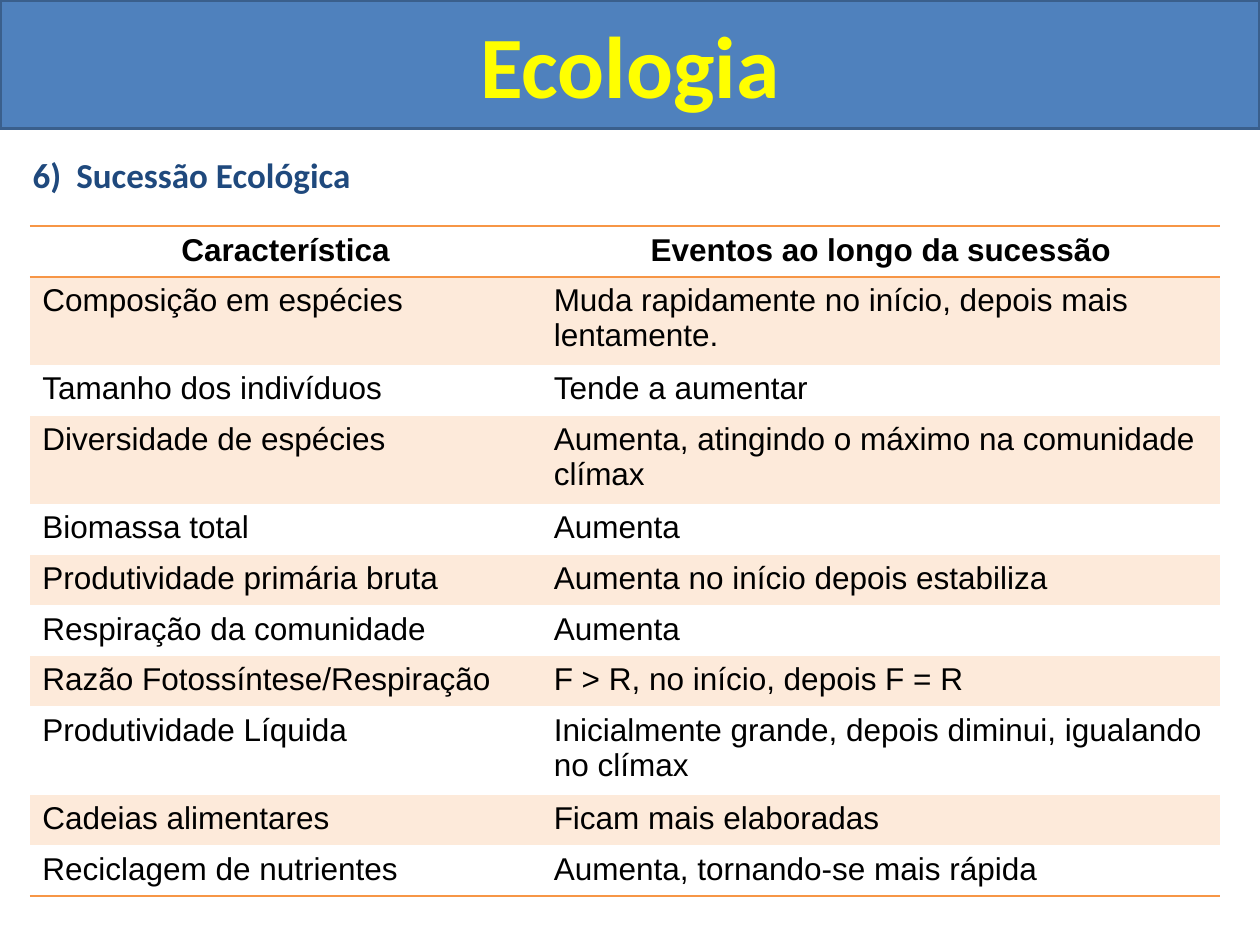
import pptx
import pptx.dml.color
import pptx.enum.shapes
import pptx.enum.text
import pptx.oxml
import pptx.oxml.ns
import pptx.util
from dataclasses import dataclass

Cm = pptx.util.Cm
Pt = pptx.util.Pt
CENTER = pptx.enum.text.PP_ALIGN.CENTER
LEFT = pptx.enum.text.PP_ALIGN.LEFT


@dataclass(frozen=True)
class Theme:
    banner: str = "4F81BD"
    banner_edge: str = "3A5F8C"
    title: str = "FFFF00"
    heading: str = "1F497D"
    body: str = "000000"
    rule: str = "F79646"
    band: str = "FDEADA"
    title_size: int = 50
    heading_size: int = 20
    body_size: int = 18
    title_font: str = "Calibri"
    body_font: str = "Arial"


THEME = Theme()
NO_STYLE = "{2D5ABB26-0587-4C30-8999-92F81FD0307C}"
COLUMN_WIDTHS = (10.31, 13.69)
LINE_ROW, WRAPPED_ROW = 1.02, 1.78  # row heights for one and two lines of text
WRAP_LENGTH = 40

SUCCESSION = [
    ("Característica", "Eventos ao longo da sucessão"),
    ("Composição em espécies", "Muda rapidamente no início, depois mais lentamente."),
    ("Tamanho dos indivíduos", "Tende a aumentar"),
    ("Diversidade de espécies", "Aumenta, atingindo o máximo na comunidade clímax"),
    ("Biomassa total", "Aumenta"),
    ("Produtividade primária bruta", "Aumenta no início depois estabiliza"),
    ("Respiração da comunidade", "Aumenta"),
    ("Razão Fotossíntese/Respiração", "F > R, no início, depois F = R"),
    ("Produtividade Líquida", "Inicialmente grande, depois diminui, igualando no clímax"),
    ("Cadeias alimentares", "Ficam mais elaboradas"),
    ("Reciclagem de nutrientes", "Aumenta, tornando-se mais rápida"),
]


def rgb(value):
    return pptx.dml.color.RGBColor.from_string(value)


def write(frame, text, color, size, font, bold=False, align=LEFT):
    paragraph = frame.paragraphs[0]
    paragraph.alignment = align
    run = paragraph.add_run()
    run.text = text
    formats = {"name": font, "size": Pt(size), "bold": bold}
    for attribute, value in formats.items():
        setattr(run.font, attribute, value)
    run.font.color.rgb = rgb(color)
    return paragraph


def add_text(slide, box, text, *style, margin_top=0.13, **options):
    frame = slide.shapes.add_textbox(*map(Cm, box)).text_frame
    frame.word_wrap = True
    frame.margin_top = Cm(margin_top)
    return write(frame, text, *style, **options)


def add_banner(slide, width):
    banner = slide.shapes.add_shape(
        pptx.enum.shapes.MSO_SHAPE.RECTANGLE, 0, 0, width, Cm(2.59))
    banner.shadow.inherit = False
    banner.fill.solid()
    banner.fill.fore_color.rgb = rgb(THEME.banner)
    banner.line.color.rgb = rgb(THEME.banner_edge)
    banner.line.width = Pt(2)


def add_rule(cell, side):
    """Draw one border of a cell; call for the bottom before the top."""
    line = pptx.oxml.parse_xml(
        f'<a:{side} {pptx.oxml.ns.nsdecls("a")} w="{Pt(1)}"><a:solidFill>'
        f'<a:srgbClr val="{THEME.rule}"/></a:solidFill></a:{side}>')
    cell._tc.get_or_add_tcPr().insert(0, line)


def add_succession_table(slide, left, top):
    heights = [WRAPPED_ROW if len(event) > WRAP_LENGTH else LINE_ROW
               for _, event in SUCCESSION]
    table = slide.shapes.add_table(
        len(SUCCESSION), len(COLUMN_WIDTHS), Cm(left), Cm(top),
        Cm(sum(COLUMN_WIDTHS)), Cm(sum(heights))).table
    table._tbl.tblPr.find(pptx.oxml.ns.qn("a:tableStyleId")).text = NO_STYLE
    for column, width in zip(table.columns, COLUMN_WIDTHS):
        column.width = Cm(width)

    last = len(SUCCESSION) - 1
    for index, (texts, height) in enumerate(zip(SUCCESSION, heights)):
        table.rows[index].height = Cm(height)
        header = index == 0
        for cell, text in zip(table.rows[index].cells, texts):
            write(cell.text_frame, text, THEME.body, THEME.body_size,
                  THEME.body_font, bold=header, align=CENTER if header else LEFT)
            # Odd rows are banded
            if index % 2:
                cell.fill.solid()
                cell.fill.fore_color.rgb = rgb(THEME.band)
            else:
                cell.fill.background()
            # Rules around the header and below the last row
            if index in (0, last):
                add_rule(cell, "lnB")
            if header:
                add_rule(cell, "lnT")


def main():
    presentation = pptx.Presentation()
    presentation.slide_width, presentation.slide_height = Cm(25.4), Cm(19.05)
    slide = presentation.slides.add_slide(presentation.slide_layouts[6])

    # Section heading, with its number hanging
    heading = add_text(slide, (0.41, 2.97, 24.41, 1.2), "6)\tSucessão Ecológica",
                       THEME.heading, THEME.heading_size, THEME.title_font, bold=True)
    indents = {"marL": Cm(0.88), "indent": -Cm(0.88)}
    for attribute, value in indents.items():
        heading._p.get_or_add_pPr().set(attribute, str(value))

    # Title banner
    add_banner(slide, presentation.slide_width)
    add_text(slide, (0, 0, 25.4, 3.15), "Ecologia", THEME.title, THEME.title_size,
             THEME.title_font, bold=True, align=CENTER, margin_top=0.22)

    # Characteristics and how they change
    add_succession_table(slide, 0.6, 4.56)
    presentation.save("out.pptx")


if __name__ == "__main__":
    main()
